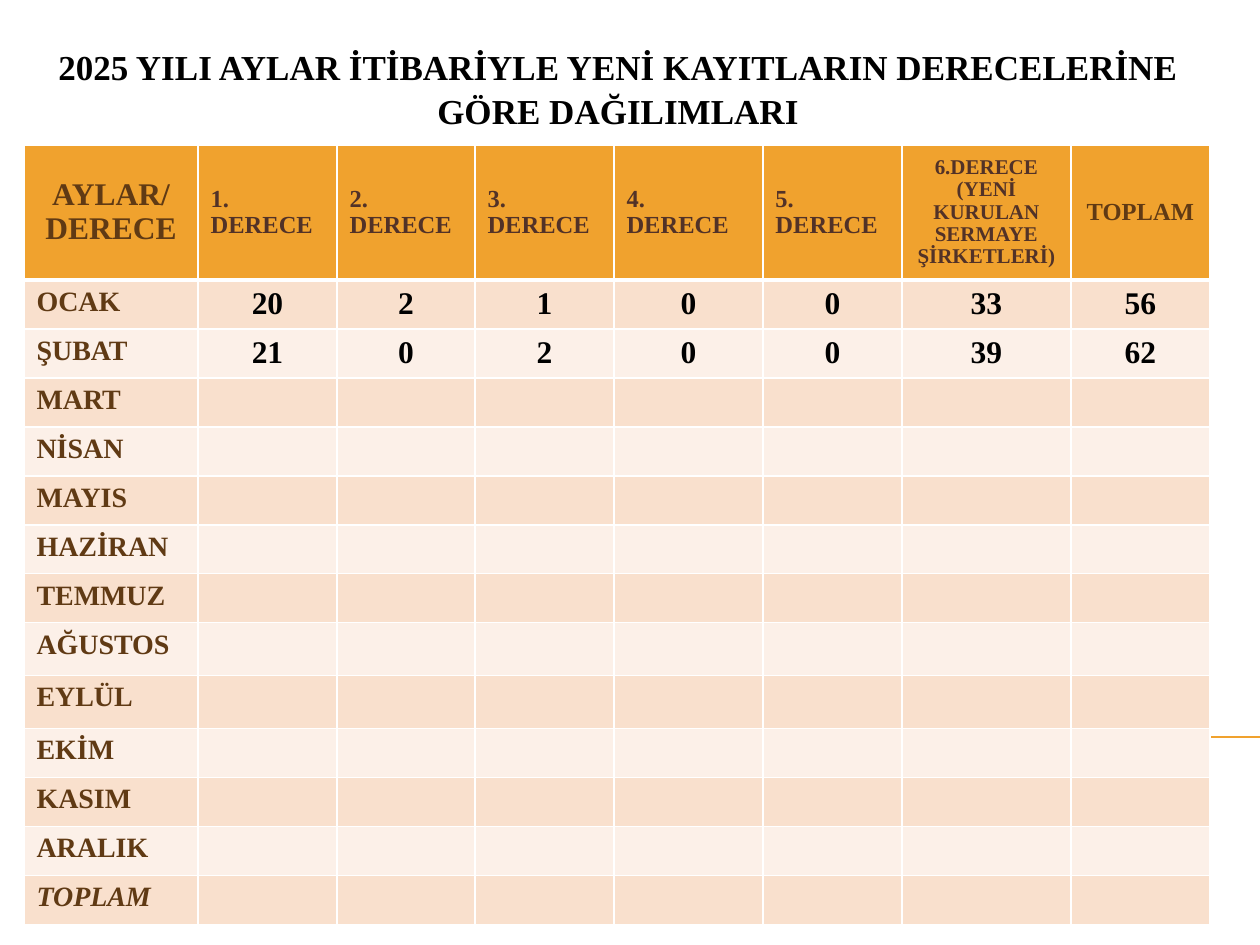
from lxml import etree
from pptx import Presentation
from pptx import util as u
from pptx.dml.color import RGBColor
from pptx.enum import shapes, text
from pptx.oxml import ns

# Content
TITLE = "2025 YILI AYLAR İTİBARİYLE YENİ KAYITLARIN DERECELERİNE GÖRE DAĞILIMLARI"
HEADS = ["AYLAR/ DERECE", "1. DERECE", "2. DERECE", "3. DERECE", "4. DERECE",
         "5. DERECE", "6.DERECE (YENİ KURULAN SERMAYE ŞİRKETLERİ)", "TOPLAM"]
MONTHS = ["OCAK", "ŞUBAT", "MART", "NİSAN", "MAYIS", "HAZİRAN", "TEMMUZ",
          "AĞUSTOS", "EYLÜL", "EKİM", "KASIM", "ARALIK", "TOPLAM"]
COUNTS = {"OCAK": [20, 2, 1, 0, 0, 33, 56], "ŞUBAT": [21, 0, 2, 0, 0, 39, 62]}

# Look
HUES = {"head": "F0A22E", "odd": "F9E0CD", "even": "FCF0E8", "edge": "FFFFFF",
        "brown": "603A14", "dark": "523227", "ink": "000000"}
FONT = "Times New Roman"
COLS = [174, 139, 138, 139, 149, 139, 169, 139]
ROWS = [135] + [53 if m in ("AĞUSTOS", "EYLÜL") else 49 for m in MONTHS]
HEAD_SIZES = [18] + [14] * 5 + [12, 14]
PX = 914400 // 126


def px(n):
    return u.Emu(n * PX)


def rgb(name):
    return RGBColor.from_string(HUES[name])


def write(frame, words, size=16, hue="ink", center=False, italic=False, gap=1.0):
    para = frame.paragraphs[0]
    para.alignment = text.PP_ALIGN.CENTER if center else text.PP_ALIGN.LEFT
    para.line_spacing = gap
    if not words:
        # An empty cell keeps its row low through the end mark's size
        para._p.get_or_add_endParaRPr().set("sz", str(size * 100))
        return
    run = para.add_run()
    run.text = words
    font = run.font
    font.name, font.size, font.bold, font.italic = FONT, u.Pt(size), True, italic
    font.color.rgb = rgb(hue)


def paint(cell, hue, top=1, base=1):
    props = cell._tc.get_or_add_tcPr()
    for side, width in (("L", 1), ("R", 1), ("T", top), ("B", base)):
        edge = etree.SubElement(props, ns.qn("a:ln" + side), w=str(u.Pt(width)))
        solid = etree.SubElement(edge, ns.qn("a:solidFill"))
        etree.SubElement(solid, ns.qn("a:srgbClr"), val=HUES["edge"])
    cell.fill.solid()
    cell.fill.fore_color.rgb = rgb(hue)


deck = Presentation()
deck.slide_width, deck.slide_height = px(1260), px(945)
slide = deck.slides.add_slide(deck.slide_layouts[5])

# Title
title = slide.shapes.title
title.left, title.top, title.width, title.height = map(px, (35, 37, 1166, 79))
frame = title.text_frame
frame.word_wrap = True
frame.auto_size = text.MSO_AUTO_SIZE.NONE
frame.vertical_anchor = text.MSO_ANCHOR.TOP
write(frame, TITLE, size=20, center=True, gap=1.05)

# Rule behind the table
rule = slide.shapes.add_connector(shapes.MSO_CONNECTOR.STRAIGHT,
                                  px(71), px(737), px(1260), px(737))
rule.line.color.rgb = rgb("head")
rule.line.width = u.Pt(0.75)
etree.SubElement(rule._element.spPr, ns.qn("a:effectLst"))

# Table grid
table = slide.shapes.add_table(len(ROWS), len(COLS), px(24), px(145),
                               px(sum(COLS)), px(sum(ROWS))).table
table.horz_banding = False
for col, width in zip(table.columns, COLS):
    col.width = px(width)
for row, height in zip(table.rows, ROWS):
    row.height = px(height)

# Header row
for c, (head, size) in enumerate(zip(HEADS, HEAD_SIZES)):
    cell = table.cell(0, c)
    cell.vertical_anchor = text.MSO_ANCHOR.MIDDLE
    write(cell.text_frame, head, size=size, center=c in (0, 6, 7), gap=0.96,
          hue="brown" if c in (0, 7) else "dark")
    paint(cell, "head", base=3)

# Month rows
for r, month in enumerate(MONTHS, 1):
    counts = COUNTS.get(month, [""] * (len(COLS) - 1))
    for c, value in enumerate([month, *counts]):
        cell = table.cell(r, c)
        if c == 0:
            write(cell.text_frame, month, hue="brown", italic=r == len(MONTHS))
        else:
            write(cell.text_frame, str(value), size=16 if value == "" else 18, center=True)
        paint(cell, "odd" if r % 2 else "even", top=3 if r == 1 else 1)

deck.save("out.pptx")
